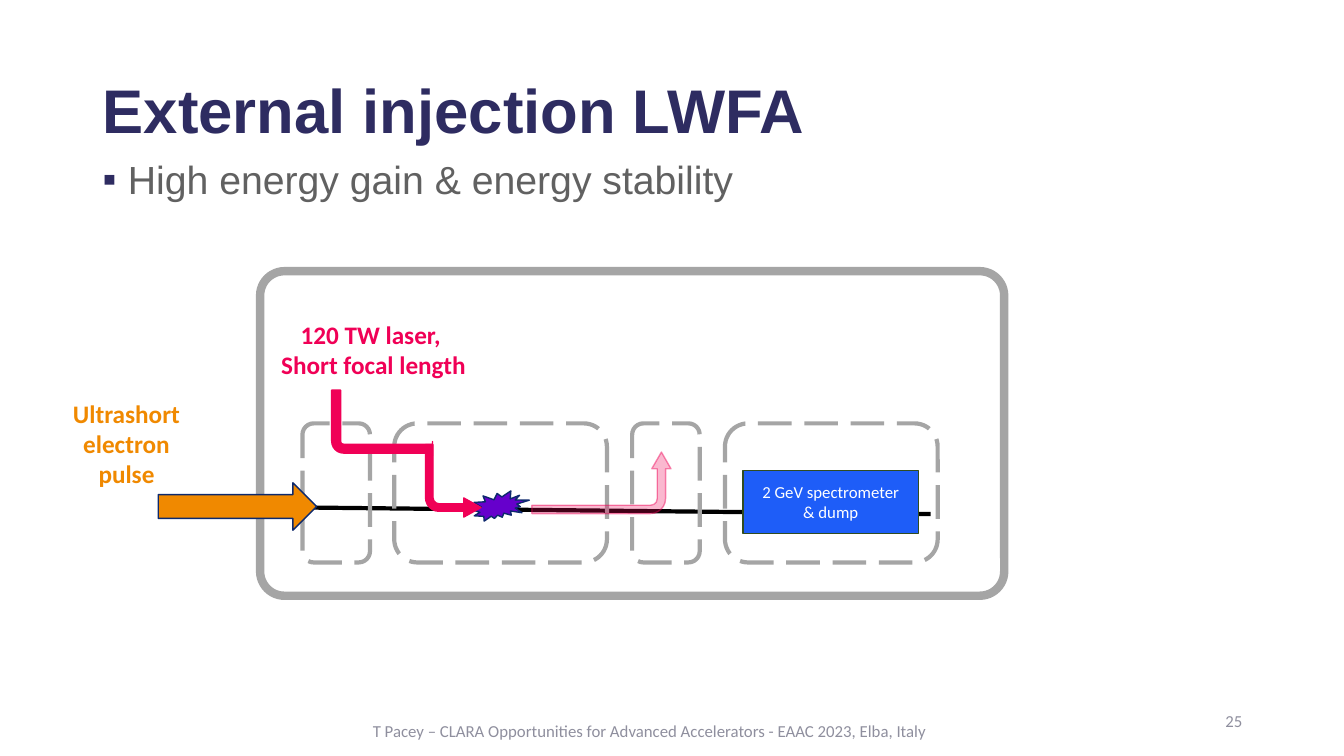
from lxml import etree
from pptx import Presentation
from pptx.dml.color import RGBColor
from pptx.enum.dml import MSO_LINE
from pptx.enum.shapes import MSO_CONNECTOR, MSO_SHAPE
from pptx.enum.text import MSO_ANCHOR, MSO_AUTO_SIZE, PP_ALIGN
from pptx.oxml.ns import qn
from pptx.util import Inches, Pt

ROUNDED, BENT = MSO_SHAPE.ROUNDED_RECTANGLE, MSO_SHAPE.BENT_ARROW
LEFT, CENTER, RIGHT = PP_ALIGN.LEFT, PP_ALIGN.CENTER, PP_ALIGN.RIGHT
TOP, MIDDLE = MSO_ANCHOR.TOP, MSO_ANCHOR.MIDDLE
COLORS = {
    "title": "2E2C61", "body": "616161", "footer": "8F8F9E", "wall": "A5A5A5",
    "laser": "F00056", "electron": "F08900", "navy": "0D296D", "beam": "000000",
    "dump": "1E5DF8", "dump_edge": "314C1F", "plasma": "6600CC", "white": "FFFFFF",
}


def rgb(name):
    return RGBColor.from_string(COLORS[name])


def write(sp, lines, size, color, font="Calibri", bold=False, align=CENTER, anchor=TOP):
    """Fill a shape with one paragraph per line and return the first one."""
    tf = sp.text_frame
    tf.word_wrap = True
    tf.auto_size = MSO_AUTO_SIZE.NONE
    tf.vertical_anchor = anchor
    for i, line in enumerate(lines):
        p = tf.add_paragraph() if i else tf.paragraphs[0]
        p.alignment = align
        r = p.add_run()
        r.text = line
        r.font.name, r.font.size, r.font.bold = font, Pt(size), bold
        r.font.color.rgb = rgb(color)
    return tf.paragraphs[0]


prs = Presentation()
prs.slide_width, prs.slide_height = Inches(13.33), Inches(7.5)
slide = prs.slides.add_slide(prs.slide_layouts[5])
shapes = slide.shapes

# Title and bullet
title = shapes.title
title.left, title.top = Inches(0.92), Inches(0.4)
title.width, title.height = Inches(11.5), Inches(1.45)
p = write(title, ["External injection LWFA"], 44, "title", "Arial", True, LEFT, MIDDLE)
p.line_spacing = 0.9

body = shapes.add_textbox(Inches(0.92), Inches(1.54), Inches(11.5), Inches(0.62))
p = write(body, ["High energy gain & energy stability"], 28, "body", "Arial", align=LEFT)
pPr = p._p.get_or_add_pPr()
pPr.set("marL", str(Inches(0.25)))
pPr.set("indent", str(-Inches(0.25)))
bullet_color = etree.SubElement(pPr, qn("a:buClr"))
etree.SubElement(bullet_color, qn("a:srgbClr"), val=COLORS["title"])
etree.SubElement(pPr, qn("a:buFont"), typeface="Arial")
etree.SubElement(pPr, qn("a:buChar"), char="▪")
p.line_spacing = 0.9

# Beam line
beam = shapes.add_connector(MSO_CONNECTOR.STRAIGHT, Inches(1.59), Inches(5.02),
                            Inches(9.23), Inches(5.1))
beam.line.color.rgb = rgb("beam")
beam.line.width = Pt(3)
etree.SubElement(beam._element.spPr, qn("a:effectLst"))

# Outer wall, then the dashed chambers inside it
walls = [(2.58, 2.69, 7.38, 3.22, 0.075, 6)]
walls += [(x, 4.2, w, 1.38, 0.167, 3)
          for x, w in [(3.91, 2.11), (7.19, 2.11), (6.27, 0.67), (3, 0.67)]]
for x, y, w, h, corner, weight in walls:
    sp = shapes.add_shape(ROUNDED, Inches(x), Inches(y), Inches(w), Inches(h))
    sp.shadow.inherit = False
    sp.adjustments[0] = corner
    sp.fill.background()
    sp.line.color.rgb = rgb("wall")
    sp.line.width = Pt(weight)
    if weight == 3:
        sp.line.dash_style = MSO_LINE.LONG_DASH

# Filled parts: preset, box, fill, line, rotation, adjustments, opacity of fill and line
parts = [
    (BENT, (3.29, 3.87, 1, 0.65), "laser", "laser", 180, (0.136, 0.107, 0, 0.181), None),
    (MSO_SHAPE.RIGHT_ARROW, (1.57, 4.79, 1.57, 0.47), "electron", "navy", 0, (), None),
    (MSO_SHAPE.RECTANGLE, (7.37, 4.67, 1.74, 0.62), "dump", "dump_edge", 0, (), None),
    (MSO_SHAPE.EXPLOSION2, (4.67, 4.87, 0.58, 0.3), "plasma", "navy", 0, (), None),
    (BENT, (5.66, 4.1, 0.61, 1.38), "laser", "laser", 90,
     (0.136, 0.156, 0.27, 0.244), (28, 43)),
    (BENT, (4.22, 4.41, 0.55, 0.72), "laser", "laser", 180,
     (0.136, 0.173, 0.311, 0.244), None),
]
for preset, box, fill, line, rotation, adjustments, opacity in parts:
    sp = shapes.add_shape(preset, *map(Inches, box))
    sp.shadow.inherit = False
    sp.fill.solid()
    sp.fill.fore_color.rgb = rgb(fill)
    sp.line.color.rgb = rgb(line)
    sp.line.width = Pt(1)
    sp.rotation = rotation
    for i, value in enumerate(adjustments):
        sp.adjustments[i] = value
    if preset == BENT:
        sp._element.spPr.find(qn("a:xfrm")).set("flipH", "1")
    if opacity:
        for color, percent in zip(sp._element.spPr.iter(qn("a:srgbClr")), opacity):
            etree.SubElement(color, qn("a:alpha"), val=str(percent * 1000))
    if fill == "dump":
        write(sp, ["2 GeV spectrometer", "& dump"], 12, "white", anchor=MIDDLE)

# Labels, footer and slide number
labels = [
    ((0.55, 3.9, 1.41, 1.01), ["Ultrashort electron pulse"],
     18, "electron", True, CENTER, TOP),
    ((2.65, 3.12, 2.11, 0.71), ["120 TW laser, ", "Short focal length"],
     18, "laser", True, CENTER, TOP),
    ((3.41, 7.05, 6.07, 0.4),
     ["T Pacey – CLARA Opportunities for Advanced Accelerators - EAAC 2023, Elba, Italy"],
     12, "footer", False, CENTER, MIDDLE),
    ((9.42, 6.95, 3, 0.4), ["25"], 12, "footer", False, RIGHT, MIDDLE),
]
for box, lines, size, color, bold, align, anchor in labels:
    sp = shapes.add_textbox(*map(Inches, box))
    write(sp, lines, size, color, bold=bold, align=align, anchor=anchor)

prs.save("out.pptx")
